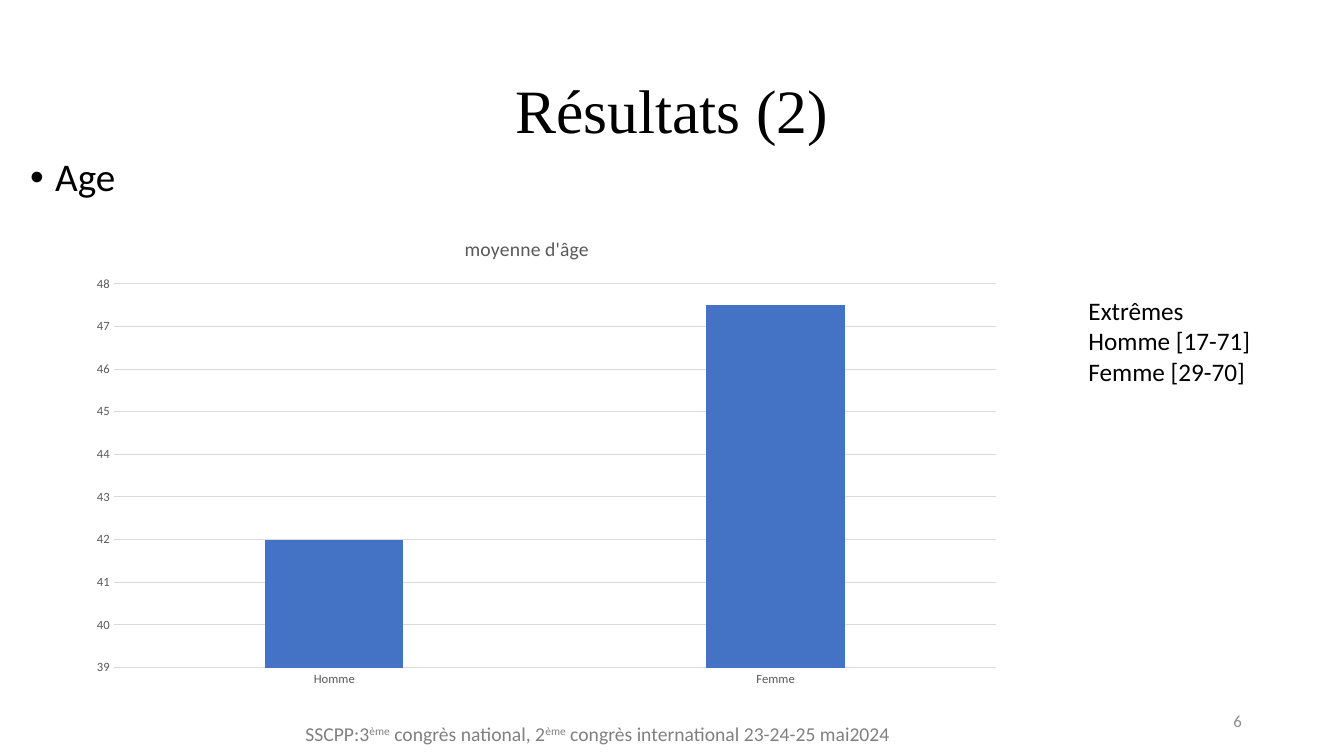
from lxml import etree
from pptx import Presentation
from pptx.chart.data import CategoryChartData
from pptx.dml.color import RGBColor
from pptx.enum.chart import XL_CHART_TYPE as ChartType, XL_TICK_MARK as TickMark
from pptx.enum.text import MSO_ANCHOR as Anchor, PP_ALIGN as Align
from pptx.oxml import parse_xml
from pptx.oxml.ns import nsdecls, qn
from pptx.util import Pt

COLORS = {
    "text": "000000",
    "chart_text": "595959",
    "grid": "D9D9D9",
    "bar": "4472C4",
    "footer": "808080",
    "number": "8C8C8C",
}


def set_font(font, size, color, name="Calibri"):
    font.name = name
    font.size = Pt(size)
    font.bold = False
    font.color.rgb = RGBColor.from_string(COLORS[color])


def add_text(left, top, width, height, lines, size, color):
    box = slide.shapes.add_textbox(Pt(left), Pt(top), Pt(width), Pt(height))
    frame = box.text_frame
    frame.word_wrap = True
    frame.text = "\n".join(lines)
    for paragraph in frame.paragraphs:
        set_font(paragraph.font, size, color)
    return frame


presentation = Presentation()
presentation.slide_width = Pt(960)
presentation.slide_height = Pt(540)
slide = presentation.slides.add_slide(presentation.slide_layouts[5])

title = slide.shapes.title
title.left, title.top, title.width, title.height = Pt(66), Pt(28.8), Pt(828), Pt(104.4)
title.text_frame.text = "Résultats (2)"
title.text_frame.vertical_anchor = Anchor.MIDDLE
heading = title.text_frame.paragraphs[0]
heading.alignment = Align.CENTER
heading.line_spacing = 0.9
set_font(heading.font, 44, "text", "Times New Roman")

age = add_text(14.4, 109.4, 880, 376.6, ["Age"], 28, "text").paragraphs[0]
age.line_spacing = 0.9
properties = age._p.get_or_add_pPr()
properties.set("marL", str(Pt(18)))
properties.set("indent", str(Pt(-18)))
bullet_font = parse_xml(f'<a:buFont {nsdecls("a")} typeface="Arial"/>')
bullet = parse_xml(f'<a:buChar {nsdecls("a")} char="•"/>')
default_run = properties.find(qn("a:defRPr"))
default_run.addprevious(bullet_font)
default_run.addprevious(bullet)

data = CategoryChartData()
data.categories = ["Homme", "Femme"]
data.add_series("moyenne d'âge", [42, 47.5])
chart = slide.shapes.add_chart(
    ChartType.COLUMN_CLUSTERED, Pt(41), Pt(154.8), Pt(671), Pt(342.7), data
).chart
set_font(chart.font, 10, "text")
chart.has_legend = False
chart.has_title = True
chart.chart_title.text_frame.text = "moyenne d'âge"
set_font(chart.chart_title.text_frame.paragraphs[0].font, 14, "chart_text")
chart.chart_title.include_in_layout = False

plot = chart.plots[0]
plot.gap_width = 219
plot.overlap = -27
plot.vary_by_categories = False
bars = plot.series[0].format.fill
bars.solid()
bars.fore_color.rgb = RGBColor.from_string(COLORS["bar"])

category_axis, value_axis = chart.category_axis, chart.value_axis
for axis in (category_axis, value_axis):
    axis.major_tick_mark = TickMark.NONE
    axis.minor_tick_mark = TickMark.NONE
    set_font(axis.tick_labels.font, 9, "chart_text")
value_axis.minimum_scale = 39
value_axis.maximum_scale = 48
value_axis.major_unit = 1
value_axis.format.line.fill.background()
for line in (category_axis.format.line, value_axis.major_gridlines.format.line):
    line.color.rgb = RGBColor.from_string(COLORS["grid"])
    line.width = Pt(0.75)

plot_area = chart._chartSpace.chart.plotArea
for layout in plot_area.findall(qn("c:layout")):
    plot_area.remove(layout)
layout = etree.Element(qn("c:layout"))
manual = etree.SubElement(layout, qn("c:manualLayout"))
for tag, value in (
    ("layoutTarget", "inner"), ("xMode", "edge"), ("yMode", "edge"),
    ("x", "0.06"), ("y", "0.14"), ("w", "0.94"), ("h", "0.8"),
):
    etree.SubElement(manual, qn(f"c:{tag}")).set("val", value)
plot_area.insert(0, layout)

extremes = ["Extrêmes", "Homme [17-71]", "Femme [29-70]"]
add_text(770.4, 207.4, 142.6, 72.7, extremes, 18, "text")

footer = add_text(211, 511.9, 645.8, 24.5, [""], 14, "footer").paragraphs[0]
for text, raised in (
    ("SSCPP:3", False), ("ème", True), (" congrès national, 2", False),
    ("ème", True), (" congrès international 23-24-25 mai2024", False),
):
    run = footer.add_run()
    run.text = text
    set_font(run.font, 14, "footer")
    if raised:
        run.font._element.set("baseline", "30000")

number = add_text(678.2, 500.4, 216, 28.8, ["6"], 12, "number")
number.vertical_anchor = Anchor.MIDDLE
number.paragraphs[0].alignment = Align.RIGHT

presentation.save("out.pptx")
